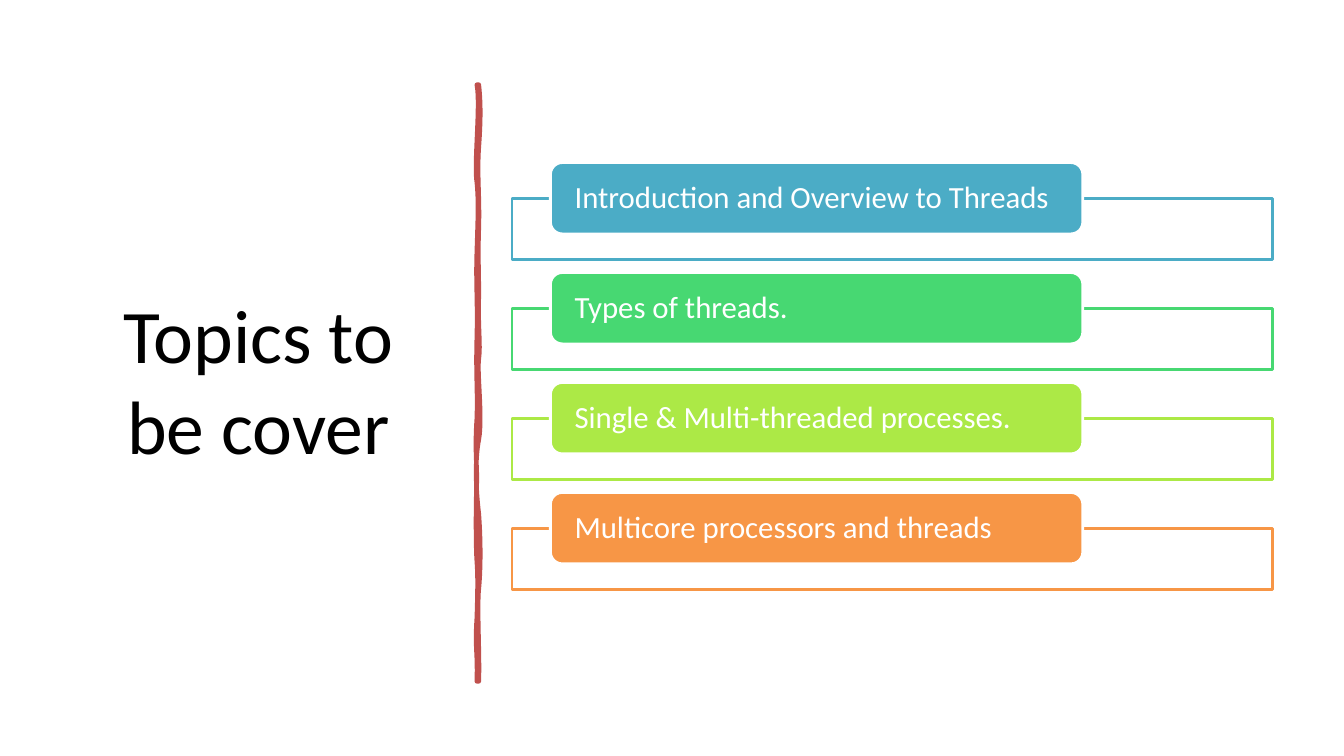
from dataclasses import dataclass

from lxml import etree
from pptx import Presentation
from pptx.dml.color import RGBColor
from pptx.enum.shapes import MSO_SHAPE
from pptx.enum.text import MSO_ANCHOR, PP_ALIGN
from pptx.oxml.ns import qn
from pptx.util import Pt

RECTANGLE, ROUNDED = MSO_SHAPE.RECTANGLE, MSO_SHAPE.ROUNDED_RECTANGLE
MIDDLE = MSO_ANCHOR.MIDDLE
LEFT, CENTER = PP_ALIGN.LEFT, PP_ALIGN.CENTER

TITLE = "Topics to be cover"
TOPICS = [
    ("Introduction and Overview to Threads", "4BACC6"),
    ("Types of threads.", "47D872"),
    ("Single & Multi-threaded processes.", "ACE946"),
    ("Multicore processors and threads", "F79646"),
]

# Each outline of the divider: a start point, then three Bezier points per curve.
DIVIDER_STROKE = [
    (342, 60.5),
    (343.4, 73.4), (343.4, 85.7), (342, 105.1),
    (340.6, 124.6), (342.7, 140.4), (342, 162.7),
    (341.3, 185), (342, 188.6), (342, 211.7),
    (341.3, 234), (343.4, 246.2), (342, 256.3),
    (340.6, 266.4), (344.9, 298.1), (342, 313.9),
    (339.1, 329), (339.8, 348.5), (342, 367.2),
    (343.4, 385.9), (343.4, 406.1), (342, 420.5),
    (340.6, 434.2), (342.7, 468), (342, 486.7),
    (341.3, 486.7), (340.6, 486.7), (340.6, 486.7),
    (341.3, 465.1), (339.1, 463.7), (340.6, 441.4),
    (341.3, 419.8), (341.3, 410.4), (340.6, 401),
    (339.8, 391.7), (339.8, 356.4), (340.6, 343.4),
    (340.6, 330.5), (339.1, 320.4), (340.6, 298.8),
    (341.3, 277.9), (339.8, 268.6), (340.6, 241.2),
    (341.3, 214.6), (339.8, 202.3), (340.6, 180),
    (341.3, 157), (342, 144), (340.6, 130.3),
    (338.4, 117.4), (343.4, 74.9), (340.6, 60.5),
    (341.3, 60.5), (341.3, 60.5), (342, 60.5),
]
DIVIDER_FILL = [
    (342, 60.5),
    (342, 82.8), (339.8, 90), (342, 109.4),
    (343.4, 128.9), (341.3, 141.8), (342, 149.8),
    (342.7, 158.4), (341.3, 183.6), (342, 211.7),
    (342.7, 239.8), (340.6, 247), (342, 260.6),
    (343.4, 274.3), (343.4, 285.8), (342, 309.6),
    (339.8, 333.4), (342, 341.3), (342, 371.5),
    (342, 401), (341.3, 398.2), (342, 416.2),
    (342.7, 434.2), (341.3, 465.8), (342, 486.7),
    (341.3, 486), (340.6, 486), (340.6, 486.7),
    (338.4, 467.3), (341.3, 455), (340.6, 441.4),
    (339.8, 428.4), (342, 409.7), (340.6, 388.1),
    (339.1, 367.9), (342.7, 360), (340.6, 339.1),
    (338.4, 318.2), (343.4, 302.4), (340.6, 277.9),
    (337.7, 252.7), (341.3, 234), (340.6, 216),
    (339.1, 198), (339.1, 186.5), (340.6, 171.4),
    (341.3, 155.5), (341.3, 133.2), (340.6, 118.1),
    (339.1, 103), (342, 87.1), (340.6, 60.5),
    (341.3, 60.5), (341.3, 60.5), (342, 60.5),
]

TITLE_BOX = (50, 50.4, 269.3, 439.9)
FRAME_LEFT, FRAME_TOP, FRAME_WIDTH, FRAME_HEIGHT = 365.8, 141.8, 543.4, 43.8
LABEL_LEFT, LABEL_TOP, LABEL_WIDTH, LABEL_HEIGHT = 393.2, 116.1, 380.3, 51
LABEL_INSET = 14.8
ROW_PITCH = 78.55


@dataclass(frozen=True)
class Theme:
    font: str = "Calibri"
    title_size: float = 54
    topic_size: float = 22
    title_color: str = "000000"
    white: str = "FFFFFF"
    divider: str = "C0504D"
    divider_line: float = 3.25
    box_line: float = 2
    frame_opacity: int = 90


THEME = Theme()


def paint(shape, fill, line, width):
    shape.shadow.inherit = False
    shape.fill.solid()
    shape.fill.fore_color.rgb = RGBColor.from_string(fill)
    shape.line.color.rgb = RGBColor.from_string(line)
    shape.line.width = Pt(width)


def set_opacity(shape, percent):
    color = shape.fill._xPr.find(qn("a:solidFill"))[0]
    etree.SubElement(color, qn("a:alpha"), val=str(percent * 1000))


def write(shape, text, size, color, align):
    frame = shape.text_frame
    frame.word_wrap = True
    frame.vertical_anchor = MIDDLE
    para = frame.paragraphs[0]
    para.alignment = align
    span = para.add_run()
    span.text = text
    span.font.name = THEME.font
    span.font.size = Pt(size)
    span.font.color.rgb = RGBColor.from_string(color)
    return para


def add_curves(outlines, shape, outline, **attributes):
    """Append one closed Bezier outline to the shape's list of outlines."""
    curves = etree.SubElement(outlines, qn("a:path"), w=str(shape.width),
                              h=str(shape.height), **attributes)

    def add_step(tag, points):
        step = etree.SubElement(curves, qn(tag))
        for x, y in points:
            etree.SubElement(step, qn("a:pt"), x=str(Pt(x) - shape.left),
                             y=str(Pt(y) - shape.top))

    add_step("a:moveTo", outline[:1])
    for start in range(1, len(outline), 3):
        add_step("a:cubicBezTo", outline[start:start + 3])
    add_step("a:close", [])


def add_title(page):
    title = page.shapes.title
    title.left, title.top, title.width, title.height = map(Pt, TITLE_BOX)
    write(title, TITLE, THEME.title_size, THEME.title_color, CENTER)


def add_divider(page):
    first, *rest = [(Pt(x), Pt(y)) for x, y in DIVIDER_STROKE[::3]]
    builder = page.shapes.build_freeform(*first)
    builder.add_line_segments(rest, close=True)
    divider = builder.convert_to_shape()
    paint(divider, THEME.divider, THEME.divider, THEME.divider_line)
    outlines = next(divider.element.iter(qn("a:pathLst")))
    outlines.remove(outlines[0])
    add_curves(outlines, divider, DIVIDER_STROKE, fill="none")
    add_curves(outlines, divider, DIVIDER_FILL, stroke="0")


def add_topic(page, row, text, color):
    offset = row * ROW_PITCH
    frame = page.shapes.add_shape(
        RECTANGLE, Pt(FRAME_LEFT), Pt(FRAME_TOP + offset),
        Pt(FRAME_WIDTH), Pt(FRAME_HEIGHT))
    paint(frame, THEME.white, color, THEME.box_line)
    set_opacity(frame, THEME.frame_opacity)

    label = page.shapes.add_shape(
        ROUNDED, Pt(LABEL_LEFT), Pt(LABEL_TOP + offset),
        Pt(LABEL_WIDTH), Pt(LABEL_HEIGHT))
    paint(label, color, THEME.white, THEME.box_line)
    inside = label.text_frame
    inside.margin_left = inside.margin_right = Pt(LABEL_INSET)
    inside.margin_top = inside.margin_bottom = 0
    para = write(label, text, THEME.topic_size, THEME.white, LEFT)
    para.line_spacing = 0.9


def main():
    deck = Presentation()
    deck.slide_width, deck.slide_height = Pt(960), Pt(540)
    page = deck.slides.add_slide(deck.slide_layouts[5])
    add_title(page)
    add_divider(page)
    for row, (text, color) in enumerate(TOPICS):
        add_topic(page, row, text, color)
    deck.save("out.pptx")


if __name__ == "__main__":
    main()
